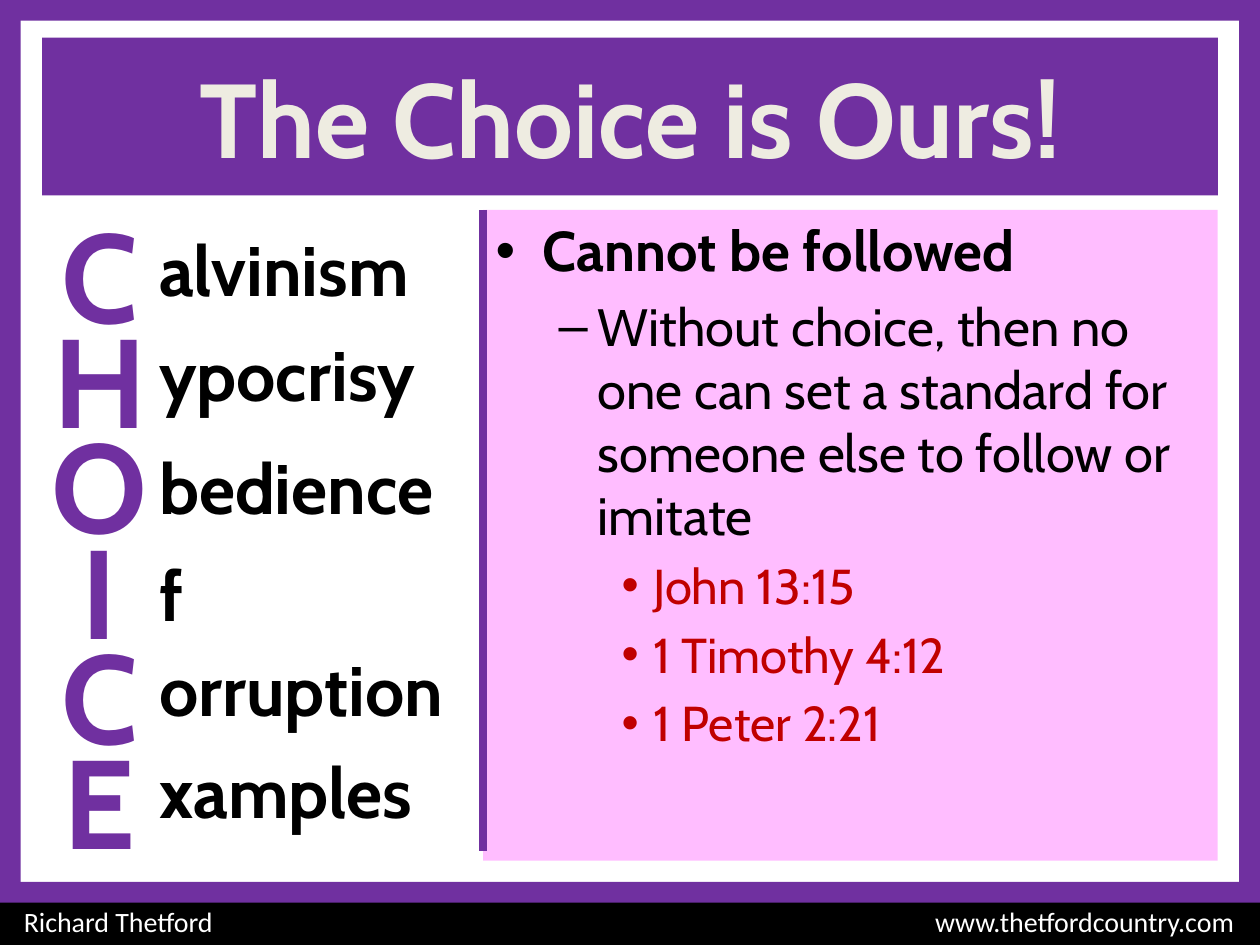
"""Build the slide 'The Choice is Ours!' with its acrostic and bullet panel."""
import pptx
import pptx.util
import pptx.dml.color
import pptx.enum.shapes
import pptx.enum.text
import pptx.oxml
import lxml.etree

Cm, Pt = pptx.util.Cm, pptx.util.Pt
rgb = pptx.dml.color.RGBColor.from_string
ALIGN = pptx.enum.text.PP_ALIGN
ANCHOR = pptx.enum.text.MSO_ANCHOR
A = "{http://schemas.openxmlformats.org/drawingml/2006/main}"
PURPLE, PINK, BLACK, RED = "7030A0", "FFBDFF", "000000", "C00000"


def write(p, text, size, color, bold=False, font="Cabin", align=ALIGN.LEFT):
    """Add one formatted run to a paragraph."""
    p.alignment = align
    r = p.add_run()
    r.text = text
    for name, value in {"size": Pt(size), "bold": bold, "name": font}.items():
        setattr(r.font, name, value)
    r.font.color.rgb = rgb(color)


def add_box(s, left, top, width, height, fill=None):
    """Add a filled rectangle, or a text box when there is no fill."""
    at = Cm(left), Cm(top), Cm(width), Cm(height)
    if fill:
        sp = s.shapes.add_shape(pptx.enum.shapes.MSO_SHAPE.RECTANGLE, *at)
        sp.shadow.inherit = False
        sp.fill.solid()
        sp.fill.fore_color.rgb = rgb(fill)
        sp.line.fill.background()
    else:
        sp = s.shapes.add_textbox(*at)
    sp.text_frame.word_wrap = True
    return sp


prs = pptx.Presentation()
prs.slide_width, prs.slide_height = Cm(25.4), Cm(19.05)
s = prs.slides.add_slide(prs.slide_layouts[5])

title = s.shapes.title
place = {"left": 0.85, "top": 0.76, "width": 23.7, "height": 3.18}
for name, value in place.items():
    setattr(title, name, Cm(value))
title.fill.solid()
title.fill.fore_color.rgb = rgb(PURPLE)
title.text_frame.auto_size = pptx.enum.text.MSO_AUTO_SIZE.NONE
title.text_frame.vertical_anchor = ANCHOR.MIDDLE
write(title.text_frame.paragraphs[0], "The Choice is Ours!", 60, "EEECE1", True,
      align=ALIGN.CENTER)

panel = add_box(s, 9.74, 4.23, 14.81, 14.82 - 0.01, PINK)
tf = panel.text_frame
tf.vertical_anchor = ANCHOR.TOP
panel.height = Cm(13.12)
levels = [
    {"size": 32, "color": BLACK, "bold": True, "bullet": "•", "margin": 0.95, "hang": 0.95},
    {"size": 30, "color": BLACK, "bold": False, "bullet": "–", "margin": 2.06, "hang": 0.79},
    {"size": 28, "color": RED, "bold": False, "bullet": "•", "margin": 3.18, "hang": 0.64},
]
points = [
    (0, "Cannot be followed"),
    (1, "Without choice, then no one can set a standard for someone else to follow or imitate"),
    (2, "John 13:15"),
    (2, "1 Timothy 4:12"),
    (2, "1 Peter 2:21"),
]
for i, (level, text) in enumerate(points):
    fmt = levels[level]
    p = tf.add_paragraph() if i else tf.paragraphs[0]
    p.level = level
    write(p, text, fmt["size"], fmt["color"], fmt["bold"])
    p.space_before = Pt(fmt["size"] * 0.2)
    pPr = p._p.get_or_add_pPr()
    pPr.set("marL", str(Cm(fmt["margin"])))
    pPr.set("indent", str(-Cm(fmt["hang"])))
    lxml.etree.SubElement(pPr, A + "buFont", typeface="Arial")
    lxml.etree.SubElement(pPr, A + "buChar", char=fmt["bullet"])

for left in (24.98, 0):
    add_box(s, left, 0, 0.42, 18.2, PURPLE)

footer = add_box(s, 0, 18.11, 25.4, 0.94, BLACK)
tf = footer.text_frame
tf.margin_left, tf.margin_right = Cm(0.48), Cm(0.25)
tf.vertical_anchor = ANCHOR.MIDDLE
p = tf.paragraphs[0]
write(p, "Richard Thetford\twww.thetfordcountry.com", 16, "FFFFFF", font="Calibri")
tabs = lxml.etree.SubElement(p._p.get_or_add_pPr(), A + "tabLst")
lxml.etree.SubElement(tabs, A + "tab", pos=str(Cm(24.4)), algn="r")

for top in (0, 17.78):
    add_box(s, 0, top, 25.4, 0.42, PURPLE)

line = s.shapes.add_connector(pptx.enum.shapes.MSO_CONNECTOR.STRAIGHT,
                              Cm(9.74), Cm(4.23), Cm(9.74), Cm(17.15))
line.line.color.rgb = rgb(PURPLE)
line.line.width = Pt(4.5)
lxml.etree.SubElement(line._element.spPr, A + "effectLst")

words = [("C", "alvinism", 4.45), ("H", "ypocrisy", 6.55), ("O", "bedience", 8.84),
         ("I", "f", 11), ("C", "orruption", 12.9), ("E", "xamples", 14.96)]
for i, (initial, rest, top) in enumerate(words):
    sp = add_box(s, 0.42, 3.86 + 2.12 * i, 3.18, 3.33)
    write(sp.text_frame.paragraphs[0], initial, 72, PURPLE, True, align=ALIGN.CENTER)
    sp = add_box(s, 2.96, top, 6.99, 1.96)
    write(sp.text_frame.paragraphs[0], rest, 40, BLACK, True)

prs.save("out.pptx")
